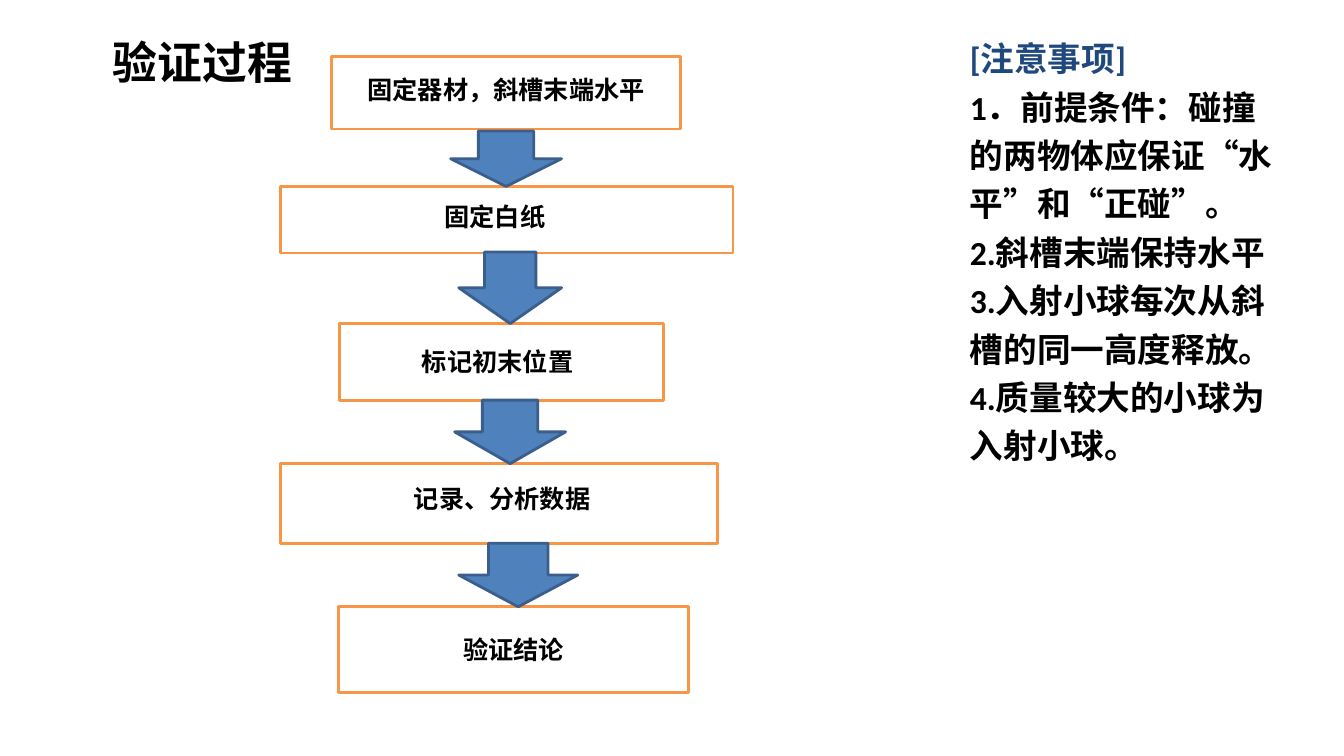
import pptx
import pptx.util
import pptx.dml.color
import pptx.enum.shapes
import pptx.enum.text

Inches = pptx.util.Inches
Pt = pptx.util.Pt
RGBColor = pptx.dml.color.RGBColor
Shape = pptx.enum.shapes.MSO_SHAPE
Align = pptx.enum.text.PP_ALIGN
Anchor = pptx.enum.text.MSO_ANCHOR

BLACK = RGBColor(0x00, 0x00, 0x00)
WHITE = RGBColor(0xFF, 0xFF, 0xFF)
ORANGE = RGBColor(0xF7, 0x96, 0x46)
BLUE = RGBColor(0x4F, 0x81, 0xBD)
EDGE = RGBColor(0x3A, 0x5F, 0x8C)
NAVY = RGBColor(0x1F, 0x49, 0x7D)

STEPS = [
    ("固定器材，斜槽末端水平", (3.29, 0.56, 3.46, 0.72), (3.37, 0.69, 3.3, 0.4)),
    ("固定白纸", (2.78, 1.85, 4.49, 0.66), (2.91, 1.95, 4, 0.4)),
    ("标记初末位置", (3.37, 3.21, 3.21, 0.76), (3.59, 3.39, 2.69, 0.4)),
    ("记录、分析数据", (2.78, 4.6, 4.34, 0.79), (3.14, 4.75, 3.68, 0.4)),
    ("验证结论", (3.36, 6.02, 3.47, 0.85), (3.91, 6.24, 2.37, 0.4)),
]
ARROWS = [
    (4.47, 1.3, 1.1, 0.55),
    (4.55, 2.5, 1.02, 0.71),
    (4.51, 3.97, 1.1, 0.63),
    (4.55, 5.39, 1.18, 0.63),
]
HEAD = "[注意事项]"
NOTES = [
    "1．前提条件：碰撞的两物体应保证“水平”和“正碰”。",
    "2.斜槽末端保持水平",
    "3.入射小球每次从斜槽的同一高度释放。",
    "4.质量较大的小球为入射小球。",
]


def add_text(para, text, size=18, font="Calibri", color=BLACK, align=None, space=None):
    para.alignment = align
    para.line_spacing = space
    run = para.add_run()
    run.text = text
    run.font.size = Pt(size)
    run.font.name = font
    run.font.bold = True
    run.font.color.rgb = color


def add_frame(slide, place):
    frame = slide.shapes.add_textbox(*map(Inches, place)).text_frame
    frame.word_wrap = True
    return frame


def add_block(slide, kind, place, fill, edge):
    block = slide.shapes.add_shape(kind, *map(Inches, place))
    block.shadow.inherit = False
    block.fill.solid()
    block.fill.fore_color.rgb = fill
    block.line.color.rgb = edge
    block.line.width = Pt(2)


def add_title(slide):
    frame = add_frame(slide, (1, 0.14, 11.33, 0.94))
    frame.vertical_anchor = Anchor.MIDDLE
    frame.margin_left = frame.margin_right = Inches(0.12)
    frame.margin_top = frame.margin_bottom = Inches(0.06)
    add_text(frame.paragraphs[0], "验证过程", size=32, font="Arial")


def add_notes(slide):
    frame = add_frame(slide, (9.52, 0.33, 3.21, 4.86))
    add_text(frame.paragraphs[0], HEAD, size=24, color=NAVY)
    for note in NOTES:
        add_text(frame.add_paragraph(), note, size=24, space=1.2)


def main():
    deck = pptx.Presentation()
    deck.slide_width = Inches(13.33)
    deck.slide_height = Inches(7.5)
    slide = deck.slides.add_slide(deck.slide_layouts[6])
    add_title(slide)
    for label, box, area in STEPS:
        add_block(slide, Shape.FLOWCHART_PROCESS, box, WHITE, ORANGE)
        frame = add_frame(slide, area)
        add_text(frame.paragraphs[0], label, align=Align.CENTER)
    for place in ARROWS:
        add_block(slide, Shape.DOWN_ARROW, place, BLUE, EDGE)
    add_notes(slide)
    deck.save("out.pptx")


if __name__ == "__main__":
    main()
